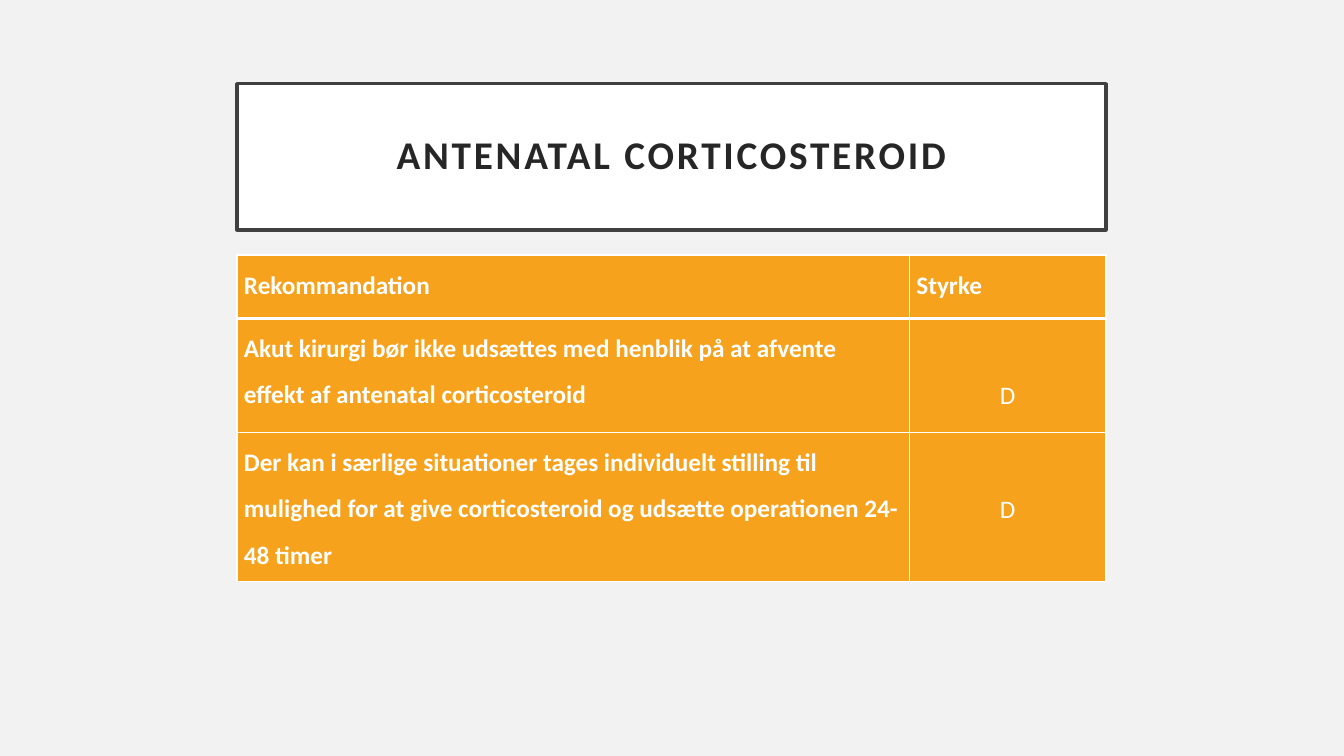
from lxml.etree import SubElement as Sub
from pptx import Presentation
from pptx.dml.color import RGBColor as Rgb
from pptx.enum.text import MSO_ANCHOR as Anchor, MSO_AUTO_SIZE as Fit, PP_ALIGN as Align
from pptx.oxml.ns import qn
from pptx.util import Inches as Inch, Pt

HUES = {"back": "F2F2F2", "white": "FFFFFF", "edge": "404040",
        "ink": "262626", "gold": "F6A21D"}
FONT = "Calibri"
WIDE, HIGH = 13.33, 7.5
LEFT, SPAN = 2.35, 8.62
COLS = (6.67, 1.95)
ROWS = (0.63, 1.13, 1.48)
LINE = 0.46
CELLS = (
    ("Rekommandation", "Styrke"),
    ("Akut kirurgi bør ikke udsættes med henblik på at afvente "
     "effekt af antenatal corticosteroid", "D"),
    ("Der kan i særlige situationer tages individuelt stilling til mulighed "
     "for at give corticosteroid og udsætte operationen 24-48 timer", "D"),
)


def hue(name):
    """Return a named colour."""
    return Rgb.from_string(HUES[name])


def paint(fill, name):
    """Make a fill solid in a named colour."""
    fill.solid()
    fill.fore_color.rgb = hue(name)


def write(para, text, size, name, bold, gap):
    """Add one formatted run to a paragraph."""
    para.line_spacing = gap
    run = para.add_run()
    run.text = text
    font = run.font
    font.name, font.size, font.bold = FONT, Pt(size), bold
    font.color.rgb = hue(name)
    return run


def pad(part, left, top, right, base):
    """Set the four inner margins in inches."""
    part.margin_left, part.margin_top = Inch(left), Inch(top)
    part.margin_right, part.margin_bottom = Inch(right), Inch(base)


def head(slide, box, text):
    """Fill and frame the title in its box."""
    title = slide.shapes.title
    title.left, title.top, title.width, title.height = map(Inch, box)
    paint(title.fill, "white")
    title.line.color.rgb = hue("edge")
    title.line.width = Pt(2.5)
    frame = title.text_frame
    frame.word_wrap, frame.auto_size = True, Fit.NONE
    frame.vertical_anchor = Anchor.MIDDLE
    pad(frame, 0.2, 0.2, 0.2, 0.2)
    para = frame.paragraphs[0]
    para.alignment = Align.CENTER
    run = write(para, text, 28, "ink", True, 0.9)
    run.font._element.set("spc", "200")


def edge(cell, widths):
    """Draw the cell borders, with widths in points by side."""
    props = cell._tc.get_or_add_tcPr()
    for side, width in widths.items():
        line = Sub(props, qn("a:ln" + side), w=str(Pt(width)))
        fill = Sub(line, qn("a:solidFill"))
        Sub(fill, qn("a:srgbClr"), val=HUES["white"])


def grid(slide, box):
    """Place the table of recommendations and strengths in its box."""
    table = slide.shapes.add_table(len(ROWS), len(COLS), *map(Inch, box)).table
    for col, width in zip(table.columns, COLS):
        col.width = Inch(width)
    for r, (row, high) in enumerate(zip(table.rows, ROWS)):
        row.height = Inch(high)
        for c, cell in enumerate(row.cells):
            grade = r > 0 and c == 1
            edge(cell, {"L": 1, "R": 1, "T": 3 if r == 1 else 1,
                        "B": 3 if r == 0 else 1})
            paint(cell.fill, "gold")
            pad(cell, 0.07, LINE if grade else 0, 0.07, 0)
            cell.vertical_anchor = Anchor.TOP
            para = cell.text_frame.paragraphs[0]
            para.alignment = Align.CENTER if grade else Align.LEFT
            write(para, CELLS[r][c], 18, "white", not grade, 1.5)


def main():
    """Build and save the slide."""
    deck = Presentation()
    deck.slide_width, deck.slide_height = Inch(WIDE), Inch(HIGH)
    slide = deck.slides.add_slide(deck.slide_layouts[5])
    paint(slide.background.fill, "back")
    head(slide, (LEFT, 0.83, SPAN, 1.45), "ANTENATAL CORTICOSTEROID")
    grid(slide, (LEFT, 2.53, SPAN, sum(ROWS)))
    deck.save("out.pptx")


if __name__ == "__main__":
    main()
